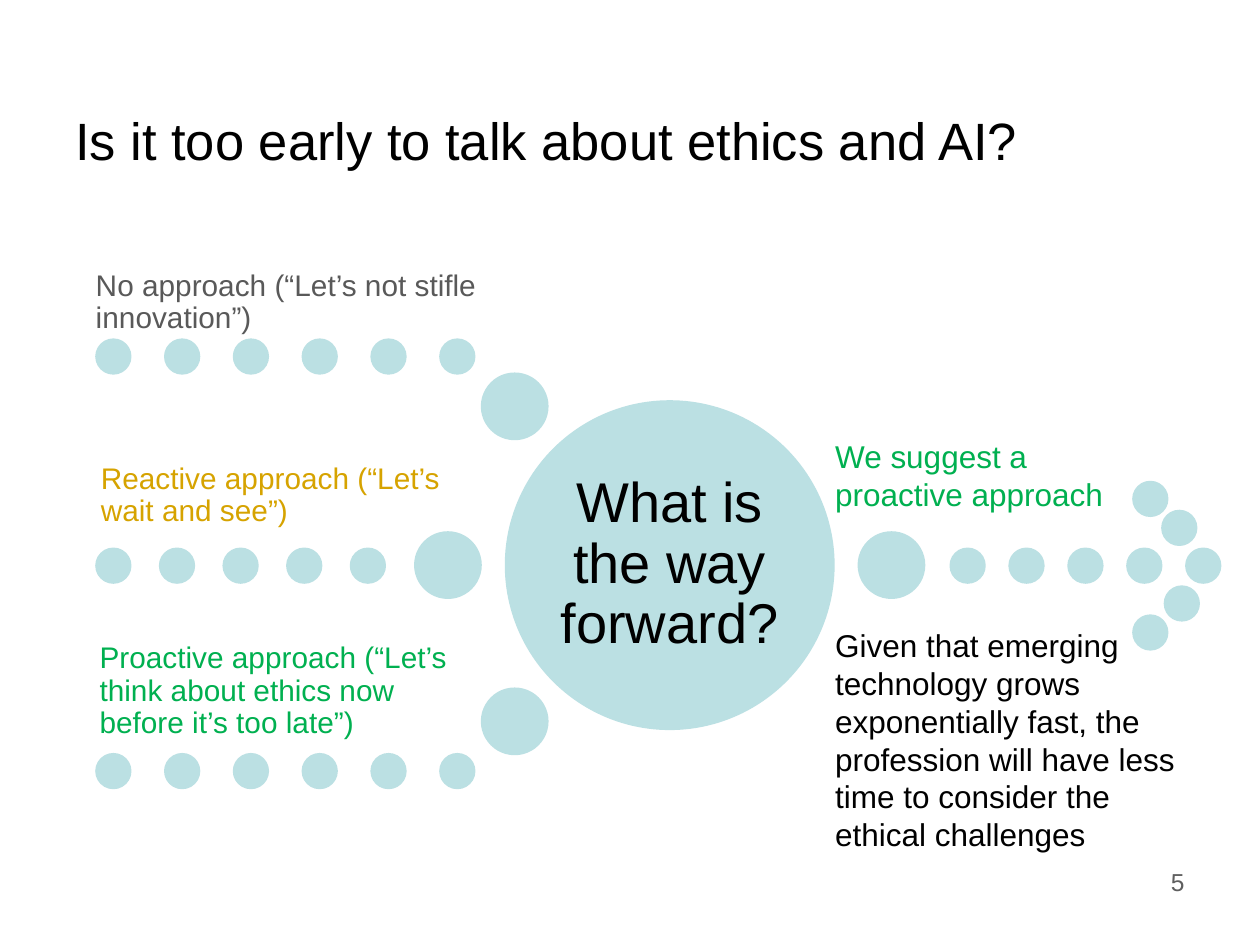
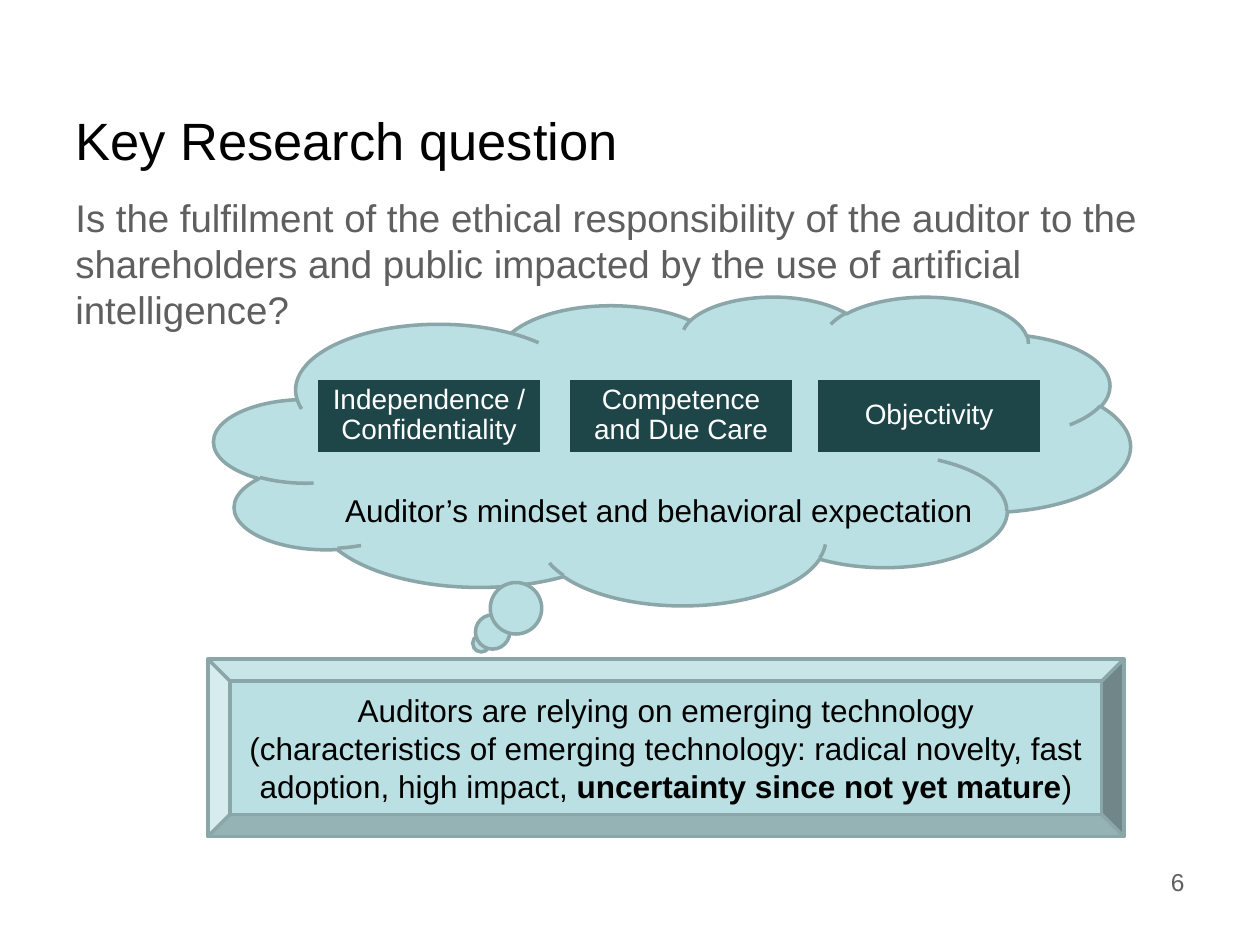
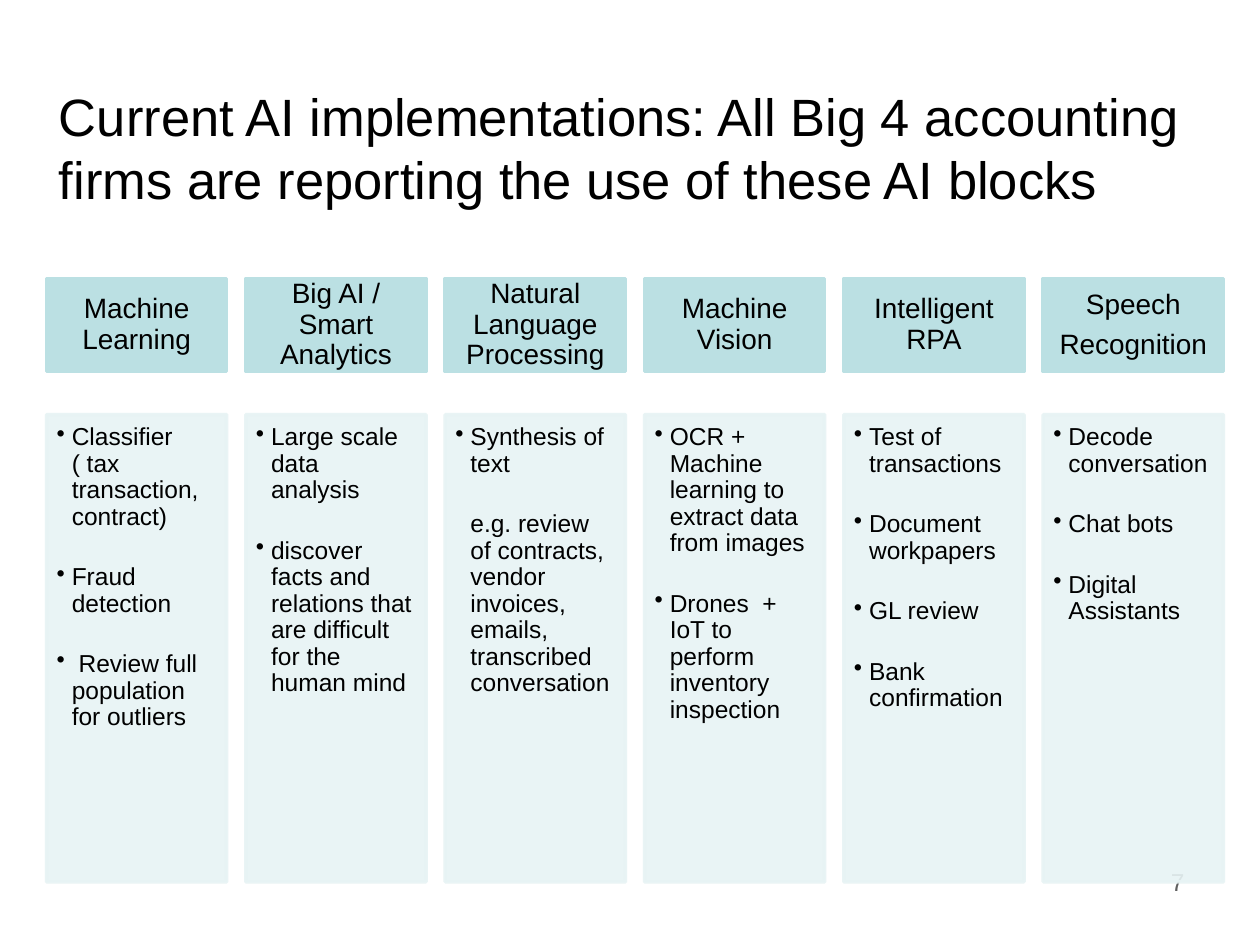
from dataclasses import dataclass
from lxml.etree import SubElement
from pptx import Presentation
from pptx.dml.color import RGBColor
from pptx.enum.shapes import MSO_SHAPE
from pptx.enum.text import MSO_ANCHOR, PP_ALIGN
from pptx.oxml.ns import qn
from pptx.util import Inches, Pt


@dataclass(frozen=True)
class Theme:
    font: str = "Arial"
    black: str = "000000"
    white: str = "FFFFFF"
    gray: str = "5F5F5F"
    slate: str = "595959"
    gold: str = "D6A300"
    green: str = "00B050"
    aqua: str = "BBE0E3"
    pale: str = "E7F3F4"
    teal: str = "1E4649"
    edge: str = "8AA6A8"
    title: int = 30
    hub: int = 32
    lead: int = 22
    body: int = 18
    label: int = 17
    head: int = 16
    small: int = 14


theme = Theme()


def draw(page, box, kind=None, fill=theme.aqua, edge=theme.aqua):
    place = [Inches(n) for n in box]
    if kind is None:
        return page.shapes.add_textbox(*place)
    shape = page.shapes.add_shape(kind, *place)
    shape.shadow.inherit = False
    shape.fill.solid()
    shape.fill.fore_color.rgb = RGBColor.from_string(fill)
    shape.line.color.rgb = RGBColor.from_string(edge)
    shape.line.width = Pt(2)
    return shape


def write(shape, lines, size, color=theme.black, align=PP_ALIGN.LEFT,
          anchor=MSO_ANCHOR.TOP, inset=(0.1, 0.05, 0.1, 0.05), pitch=1.0, gap=0, mark=None):
    frame = shape.text_frame
    frame.word_wrap = True
    frame.vertical_anchor = anchor
    frame.margin_left, frame.margin_top, frame.margin_right, frame.margin_bottom = map(Inches, inset)
    for i, line in enumerate(lines):
        para = frame.paragraphs[0] if i == 0 else frame.add_paragraph()
        para.text = line
        para.alignment = align
        para.line_spacing = pitch
        if i:
            para.space_before = Pt(gap)
        if mark:
            props = para._p.get_or_add_pPr()
            props.set("marL", str(Inches(0.12)))
            if line.startswith("e.g."):
                props.set("indent", "0")
                SubElement(props, qn("a:buNone"))
            else:
                props.set("indent", str(Inches(-0.12)))
                SubElement(props, qn("a:buChar")).set("char", mark)
        para.font.name = theme.font
        para.font.size = Pt(size)
        para.font.color.rgb = RGBColor.from_string(color)
    return frame


deck = Presentation()
deck.slide_width, deck.slide_height = Inches(10), Inches(7.5)

titles = [
    ("Is it too early to talk about ethics and AI?", (0.5, 0.67, 9, 0.88)),
    ("Key Research question", (0.5, 0.67, 9, 0.88)),
    ("Current AI implementations: All Big 4 accounting firms are reporting the use of these AI blocks",
     (0.37, 0.73, 9.47, 0.88)),
]
pages = []
for number, (title, box) in enumerate(titles, 5):
    page = deck.slides.add_slide(deck.slide_layouts[6])
    write(draw(page, box), [title], theme.title, anchor=MSO_ANCHOR.MIDDLE)
    write(draw(page, (7.17, 6.83, 2.33, 0.52)), [str(number)], theme.small, theme.gray, PP_ALIGN.RIGHT)
    pages.append(page)
ethics, question, blocks = pages

dots = [(9, 3.83), (9.23, 4.06), (9.25, 4.66), (9, 4.89)]
for first, last, count, top in [(0.77, 3.5, 6, 2.7), (0.77, 2.79, 5, 4.36),
                                (0.77, 3.5, 6, 5.99), (7.55, 9.42, 5, 4.36)]:
    dots += [(first + (last - first) * i / (count - 1), top) for i in range(count)]
for left, top in dots:
    draw(ethics, (left, top, 0.26, 0.26), MSO_SHAPE.OVAL)
for left, top in [(3.83, 2.97), (3.3, 4.23), (3.83, 5.47), (6.82, 4.23)]:
    draw(ethics, (left, top, 0.51, 0.51), MSO_SHAPE.OVAL)

hub = draw(ethics, (4.02, 3.19, 2.59, 2.59), MSO_SHAPE.OVAL)
write(hub, ["What is the way forward?"], theme.hub, align=PP_ALIGN.CENTER,
      anchor=MSO_ANCHOR.MIDDLE, inset=[0.04] * 4, pitch=0.9)

for text, color, box in [
    ("No approach (“Let’s not stifle innovation”)", theme.slate, (0.76, 2, 3.22, 0.66)),
    ("Reactive approach (“Let’s wait and see”)", theme.gold, (0.8, 3.53, 2.79, 0.66)),
    ("Proactive approach (“Let’s think about ethics now before it’s too late”)",
     theme.green, (0.79, 4.89, 2.79, 0.98)),
]:
    write(draw(ethics, box), [text], theme.label, color,
          anchor=MSO_ANCHOR.BOTTOM, inset=[0] * 4, pitch=0.9)

for text, color, box in [
    ("We suggest a proactive approach", theme.green, (6.53, 3.42, 2.75, 0.71)),
    ("Given that emerging technology grows exponentially fast, the profession will have less "
     "time to consider the ethical challenges", theme.black, (6.53, 4.92, 3.01, 1.92)),
]:
    write(draw(ethics, box), [text], theme.body, color)

write(draw(question, (0.5, 1.49, 9, 4.96)),
      ["Is the fulfilment of the ethical responsibility of the auditor to the shareholders and "
       "public impacted by the use of artificial intelligence?"], theme.lead, theme.gray)
draw(question, (1.7, 2.35, 7.27, 2.45), MSO_SHAPE.CLOUD_CALLOUT, edge=theme.edge)

centred = dict(align=PP_ALIGN.CENTER, anchor=MSO_ANCHOR.MIDDLE)
tile = dict(centred, inset=(0.12, 0.07, 0.12, 0.07), pitch=0.9, gap=5.6)
for text, left in [("Independence / Confidentiality", 2.51),
                   ("Competence and Due Care", 4.51), ("Objectivity", 6.48)]:
    value = draw(question, (left, 3, 1.79, 0.6), MSO_SHAPE.RECTANGLE, theme.teal)
    write(value, [text], theme.head, theme.white, **tile)

mindset = write(draw(question, (2.64, 3.85, 5.38, 0.4)),
                ["Auditor’s mindset and behavioral expectation"], theme.body)
mindset.word_wrap = False

bevel = draw(question, (1.65, 5.23, 7.27, 1.41), MSO_SHAPE.BEVEL, edge=theme.edge)
reliance = write(bevel, [
    "Auditors are relying on emerging technology",
    "(characteristics of emerging technology: radical novelty, fast adoption, high impact, ",
], theme.body, **centred)
for text, bold in [("uncertainty since not yet mature", True), (")", False)]:
    run = reliance.paragraphs[-1].add_run()
    run.text = text
    run.font.bold = bold

columns = [
    (["Machine Learning"],
     ["Classifier ( tax transaction, contract)", "Fraud detection", " Review full population for outliers"]),
    (["Big AI / Smart Analytics"],
     ["Large scale data analysis", "discover facts and relations that are difficult for the human mind"]),
    (["Natural Language Processing"],
     ["Synthesis of text", "e.g. review of contracts, vendor invoices, emails, transcribed conversation"]),
    (["Machine Vision"],
     ["OCR + Machine learning to extract data from images",
      "Drones  + IoT to perform inventory inspection"]),
    (["Intelligent RPA"],
     ["Test of transactions", "Document workpapers", "GL review", "Bank confirmation"]),
    (["Speech", "Recognition"],
     ["Decode conversation", "Chat bots", "Digital Assistants"]),
]
for i, (head, items) in enumerate(columns):
    left = 0.37 + (8.28 - 0.37) * i / 5
    write(draw(blocks, (left, 2.21, 1.43, 0.74), MSO_SHAPE.RECTANGLE), head, theme.head, **tile)
    panel = draw(blocks, (left, 3.29, 1.43, 3.71), MSO_SHAPE.RECTANGLE, theme.pale, theme.pale)
    for color in panel._element.spPr.iter(qn("a:srgbClr")):
        SubElement(color, qn("a:alpha")).set("val", "90000")
    write(panel, items, theme.small, inset=(0.08, 0.08, 0.11, 0.12), pitch=0.9, gap=19.4, mark="•")

deck.save("out.pptx")
